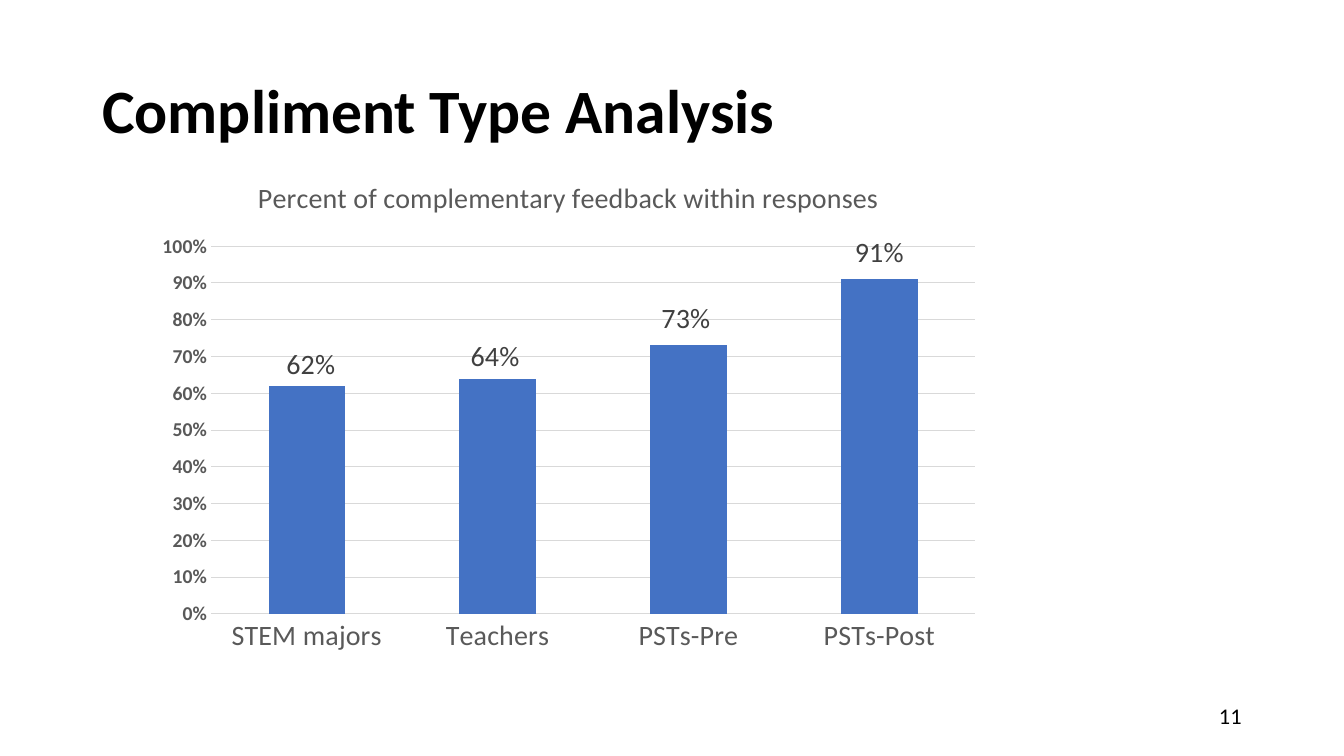
from lxml import etree
from pptx import Presentation
from pptx.chart.data import CategoryChartData
from pptx.dml.color import RGBColor
from pptx.enum.chart import XL_CHART_TYPE, XL_TICK_MARK
from pptx.enum.text import MSO_ANCHOR, PP_ALIGN
from pptx.oxml.ns import qn
from pptx.util import Pt

STACKED = XL_CHART_TYPE.COLUMN_STACKED
NO_TICK = XL_TICK_MARK.NONE
MIDDLE = MSO_ANCHOR.MIDDLE
LEFT, RIGHT = PP_ALIGN.LEFT, PP_ALIGN.RIGHT
BLACK = RGBColor(0, 0, 0)
GRAY = RGBColor(0x59, 0x59, 0x59)
DARK = RGBColor(0x40, 0x40, 0x40)
PALE = RGBColor(0xD9, 0xD9, 0xD9)
BLUE = RGBColor(0x44, 0x72, 0xC4)

C15 = "http://schemas.microsoft.com/office/drawing/2012/chart"
EXT = "{CE6537A1-D6FC-4f65-9D91-7224C49458BB}"
SHARES = {"STEM majors": 0.62, "Teachers": 0.64, "PSTs-Pre": 0.73, "PSTs-Post": 0.91}
SHIFTS = [(3, -96.5), (-1.8, -99.7), (-1.8, -115.2), (0, -138.4)]
WIDE, HIGH = 604.8, 361.4
PLOT = {"x": 47.2, "y": 63.6, "w": 545.5, "h": 262.7}
INNER = {"layoutTarget": "inner", "xMode": "edge", "yMode": "edge"}
SPANS = {"x": WIDE, "y": HIGH, "w": WIDE, "h": HIGH}


class Deck:
    """Holds the style and the current slide."""

    def __init__(self, face):
        self.face = face
        self.prs = Presentation()
        self.prs.slide_width, self.prs.slide_height = Pt(960), Pt(540)
        self.slide = self.prs.slides.add_slide(self.prs.slide_layouts[6])

    def apply(self, item, form):
        for key, value in form.items():
            setattr(item, key, value)

    def style(self, font, size, color, bold=False):
        self.apply(font, {"name": self.face, "size": Pt(size), "bold": bold})
        font.color.rgb = color

    def text(self, words, box, size, bold=False, align=LEFT):
        frame = self.slide.shapes.add_textbox(*map(Pt, box)).text_frame
        self.apply(frame, {"word_wrap": True, "vertical_anchor": MIDDLE})
        para = frame.paragraphs[0]
        para.alignment = align
        para.line_spacing = 0.9 if bold else 1.0
        run = para.add_run()
        run.text = words
        self.style(run.font, size, BLACK, bold)

    def place(self, layout, points, modes):
        manual = etree.SubElement(layout, qn("c:manualLayout"))
        parts = {key: value / SPANS[key] for key, value in points.items()}
        for key, value in {**modes, **parts}.items():
            etree.SubElement(manual, qn(f"c:{key}")).set("val", str(value))

    def line(self, line):
        line.color.rgb = PALE
        line.width = Pt(0.75)

    def unlead(self, group):
        for lead in group.findall(qn("c:showLeaderLines")):
            lead.set("val", "0")
        more = etree.SubElement(group, qn("c:extLst"))
        ext = etree.SubElement(more, qn("c:ext"), nsmap={"c15": C15})
        ext.set("uri", EXT)
        etree.SubElement(ext, f"{{{C15}}}showLeaderLines").set("val", "0")

    def labels(self, bars):
        marks = bars.data_labels
        self.apply(marks, {"show_value": True, "number_format": "0%",
                           "number_format_is_linked": False})
        self.style(marks.font, 20, DARK)
        group = bars._element.find(qn("c:dLbls"))
        for i, (x, y) in enumerate(SHIFTS):
            self.style(bars.points[i].data_label.font, 20, DARK)
            layout = etree.Element(qn("c:layout"))
            group.findall(qn("c:dLbl"))[i].insert(1, layout)
            self.place(layout, {"x": x, "y": y}, {})
        self.unlead(group)

    def chart(self, title, shares, box):
        data = CategoryChartData(number_format="0%")
        data.categories = list(shares)
        data.add_series("Series 1", list(shares.values()))
        chart = self.slide.shapes.add_chart(STACKED, *map(Pt, box), data).chart
        self.style(chart.font, 11, BLACK)
        chart.has_legend = False
        head = chart.chart_title
        head.include_in_layout = False
        run = head.text_frame.paragraphs[0].add_run()
        run.text = title
        self.style(run.font, 20, GRAY)

        cat, val = chart.category_axis, chart.value_axis
        for axis, size, bold in ((cat, 20, False), (val, 14, True)):
            axis.major_tick_mark = axis.minor_tick_mark = NO_TICK
            self.style(axis.tick_labels.font, size, GRAY, bold)
        self.line(cat.format.line)
        val.format.line.fill.background()
        self.line(val.major_gridlines.format.line)
        self.apply(val, {"minimum_scale": 0, "maximum_scale": 1, "major_unit": 0.1})
        self.apply(val.tick_labels, {"number_format": "0%",
                                     "number_format_is_linked": False})

        plot = chart.plots[0]
        self.apply(plot, {"gap_width": 150, "overlap": 100,
                          "vary_by_categories": False})
        bars = plot.series[0]
        bars.format.fill.solid()
        bars.format.fill.fore_color.rgb = BLUE
        self.labels(bars)
        area = chart._chartSpace.find(".//" + qn("c:plotArea"))
        layout = area.find(qn("c:layout"))
        if layout is None:
            layout = etree.Element(qn("c:layout"))
            area.insert(0, layout)
        self.place(layout, PLOT, INNER)


def main():
    deck = Deck("Calibri")
    deck.text("Compliment Type Analysis", (66, 28.75, 828, 104.4), 44, bold=True)
    deck.text("11", (678, 497, 216, 28.75), 16, align=RIGHT)
    deck.chart("Percent of complementary feedback within responses", SHARES,
               (103.7, 112.3, WIDE, HIGH))
    deck.prs.save("out.pptx")


if __name__ == "__main__":
    main()
